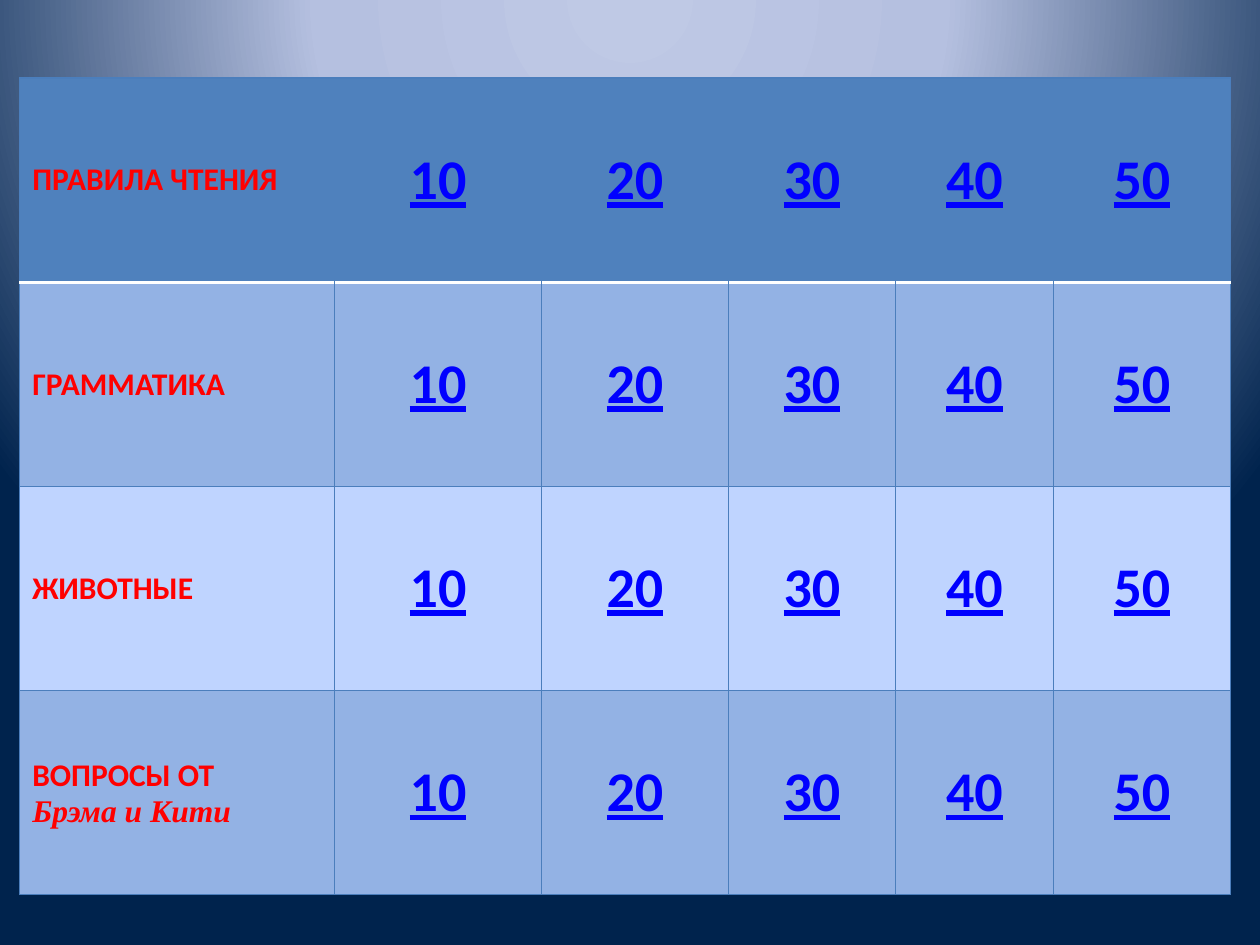
import dataclasses

import pptx
import pptx.dml.color
import pptx.enum.text
import pptx.oxml
import pptx.oxml.ns
import pptx.util
import lxml.etree

Pt = pptx.util.Pt


@dataclasses.dataclass(frozen=True)
class Theme:
    header: str = "4F81BD"
    bands: tuple = ("93B2E4", "BFD4FF")
    grid: str = "4B7EBC"
    rule: str = "FFFFFF"
    topic: str = "FF0000"
    score: str = "0000FF"
    backdrop: tuple = ((0, "BFC9E5"), (40, "B5C0E0"), (100, "00234D"))
    font: str = "Calibri"
    accent_font: str = "Times New Roman"
    topic_size: int = 18
    score_size: int = 32
    grid_width: float = 0.75
    rule_width: float = 2


class QuizSlide:
    def __init__(self, presentation, theme):
        self.theme = theme
        self.slide = presentation.slides.add_slide(presentation.slide_layouts[6])

    def background(self):
        stops = "".join(
            f'<a:gs pos="{position * 1000}"><a:srgbClr val="{color}"/></a:gs>'
            for position, color in self.theme.backdrop
        )
        element = pptx.oxml.parse_xml(
            f'<p:bg {pptx.oxml.ns.nsdecls("p", "a")}><p:bgPr><a:gradFill rotWithShape="1">'
            f'<a:gsLst>{stops}</a:gsLst><a:path path="circle">'
            '<a:fillToRect l="50000" t="-80000" r="50000" b="180000"/></a:path>'
            "</a:gradFill><a:effectLst/></p:bgPr></p:bg>"
        )
        self.slide.element.cSld.insert(0, element)

    def border(self, cell, side, color, width):
        properties = cell._tc.get_or_add_tcPr()
        line = lxml.etree.SubElement(properties, pptx.oxml.ns.qn(f"a:ln{side}"))
        line.set("w", str(int(Pt(width))))
        if color is None:
            lxml.etree.SubElement(line, pptx.oxml.ns.qn("a:noFill"))
        else:
            fill = lxml.etree.SubElement(line, pptx.oxml.ns.qn("a:solidFill"))
            lxml.etree.SubElement(fill, pptx.oxml.ns.qn("a:srgbClr")).set("val", color)

    def borders(self, cell, row, column, last_column):
        theme = self.theme
        grid = (theme.grid, theme.grid_width)
        rule = (theme.rule, theme.rule_width)
        hidden = (None, 0)
        sides = {
            "L": hidden if row == 0 and column > 0 else grid,
            "R": hidden if row == 0 and column < last_column else grid,
            "T": rule if row == 1 else grid,
            "B": rule if row == 0 else grid,
        }
        for side, (color, width) in sides.items():
            self.border(cell, side, color, width)

    def text(self, cell, content, is_topic):
        theme = self.theme
        cell.vertical_anchor = pptx.enum.text.MSO_ANCHOR.MIDDLE
        cell.text_frame.text = content
        for index, paragraph in enumerate(cell.text_frame.paragraphs):
            if not is_topic:
                paragraph.alignment = pptx.enum.text.PP_ALIGN.CENTER
            font = paragraph.runs[0].font
            font.name = theme.accent_font if index else theme.font
            font.size = Pt(theme.topic_size if is_topic else theme.score_size)
            font.bold = True
            font.italic = index > 0
            font.underline = not is_topic
            color = theme.topic if is_topic else theme.score
            font.color.rgb = pptx.dml.color.RGBColor.from_string(color)

    def table(self, left, top, widths, row_height, rows):
        frame = self.slide.shapes.add_table(
            len(rows), len(widths), Pt(left), Pt(top),
            Pt(sum(widths)), Pt(row_height * len(rows)),
        )
        table = frame.table
        for column, width in zip(table.columns, widths):
            column.width = Pt(width)
        for row_index, values in enumerate(rows):
            table.rows[row_index].height = Pt(row_height)
            color = self.theme.bands[(row_index - 1) % 2] if row_index else self.theme.header
            for column_index, content in enumerate(values):
                cell = table.cell(row_index, column_index)
                self.borders(cell, row_index, column_index, len(widths) - 1)
                cell.fill.solid()
                cell.fill.fore_color.rgb = pptx.dml.color.RGBColor.from_string(color)
                self.text(cell, content, column_index == 0)


def main():
    presentation = pptx.Presentation()
    presentation.slide_width = Pt(720)
    presentation.slide_height = Pt(540)
    quiz = QuizSlide(presentation, Theme())
    quiz.background()
    topics = ["ПРАВИЛА ЧТЕНИЯ", "ГРАММАТИКА", "ЖИВОТНЫЕ", "ВОПРОСЫ ОТ\nБрэма и Кити"]
    scores = [str(score) for score in range(10, 60, 10)]
    quiz.table(
        left=11.25, top=44.6, widths=[180, 118.25, 106.75, 95.5, 90.25, 101.25],
        row_height=116.7, rows=[[topic, *scores] for topic in topics],
    )
    presentation.save("out.pptx")


if __name__ == "__main__":
    main()
